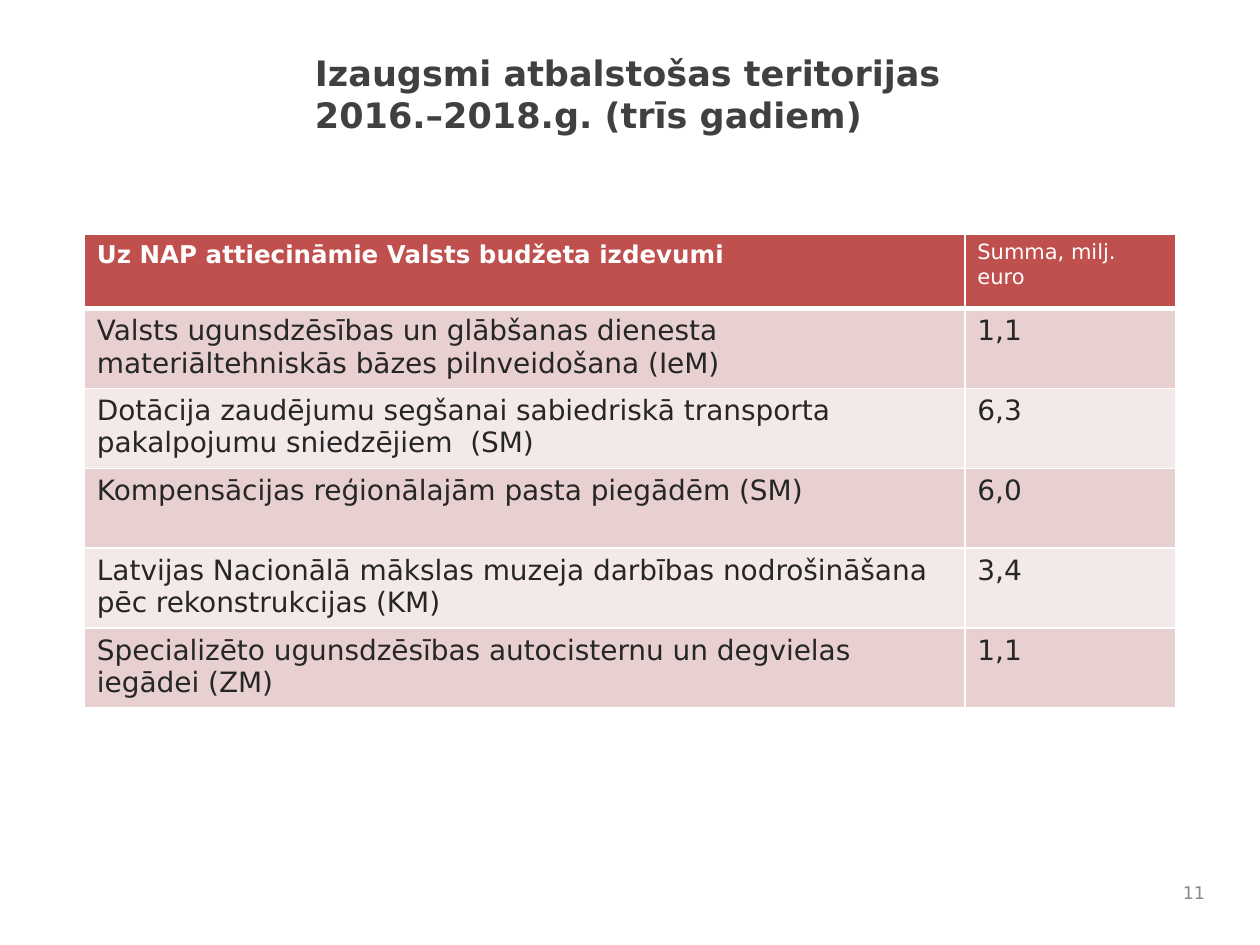
import pptx
import pptx.util
import pptx.dml.color
import pptx.enum.text
import pptx.oxml
import pptx.oxml.ns

Cm = pptx.util.Cm
Pt = pptx.util.Pt


def rgb(value):
    return pptx.dml.color.RGBColor.from_string(value)


def write(paragraph, text, color, formats):
    run = paragraph.add_run()
    run.text = text
    run.font.color.rgb = rgb(color)
    for name, value in {"name": "DejaVu Sans", **formats}.items():
        setattr(run.font, name, value)


deck = pptx.Presentation()
deck.slide_width, deck.slide_height = Cm(25.4), Cm(19.05)
slide = deck.slides.add_slide(deck.slide_layouts[6])

# Title
title = slide.shapes.add_textbox(Cm(6.1), Cm(0.91), Cm(17), Cm(1.96)).text_frame
title.word_wrap = True
title_lines = ["Izaugsmi atbalstošas teritorijas", "2016.–2018.g. (trīs gadiem)"]
for index, line in enumerate(title_lines):
    paragraph = title.add_paragraph() if index else title.paragraphs[0]
    write(paragraph, line, "404040", {"size": Pt(20), "bold": True})

# Budget table
budget = [
    ("Uz NAP attiecināmie Valsts budžeta izdevumi", "Summa, milj. euro"),
    ("Valsts ugunsdzēsības un glābšanas dienesta materiāltehniskās bāzes pilnveidošana (IeM)", "1,1"),
    ("Dotācija zaudējumu segšanai sabiedriskā transporta pakalpojumu sniedzējiem  (SM)", "6,3"),
    ("Kompensācijas reģionālajām pasta piegādēm (SM)", "6,0"),
    ("Latvijas Nacionālā mākslas muzeja darbības nodrošināšana pēc rekonstrukcijas (KM)", "3,4"),
    ("Specializēto ugunsdzēsības autocisternu un degvielas iegādei (ZM)", "1,1"),
]
header_formats = [{"size": Pt(14), "bold": True}, {"size": Pt(12), "bold": False}]
body_formats = {"size": Pt(16), "bold": False}
table = slide.shapes.add_table(
    len(budget), 2, Cm(1.7), Cm(4.72), Cm(22), Cm(9.55)).table
table.columns[0].width, table.columns[1].width = Cm(17.75), Cm(4.25)

for r, entry in enumerate(budget):
    table.rows[r].height = Cm(1.61 if r else 1.5)
    for c, text in enumerate(entry):
        cell = table.cell(r, c)
        color = "262626" if r else "FFFFFF"
        write(cell.text_frame.paragraphs[0], text, color,
              body_formats if r else header_formats[c])

        # White borders, with a thick rule under the header
        edges = {"lnL": 1, "lnR": 1, "lnT": 3 if r == 1 else 1, "lnB": 1 if r else 3}
        properties = cell._tc.get_or_add_tcPr()
        for edge, width in edges.items():
            properties.append(pptx.oxml.parse_xml(
                f'<a:{edge} {pptx.oxml.ns.nsdecls("a")} w="{Pt(width)}"><a:solidFill>'
                f'<a:srgbClr val="FFFFFF"/></a:solidFill></a:{edge}>'))

        # Banded fill
        cell.fill.solid()
        band = "E8D0D0" if r % 2 else "F4E9E9"
        cell.fill.fore_color.rgb = rgb(band if r else "C0504D")

# Slide number
number = slide.shapes.add_textbox(Cm(23.5), Cm(17.58), Cm(1.04), Cm(0.84)).text_frame
number.word_wrap = True
number.vertical_anchor = pptx.enum.text.MSO_ANCHOR.MIDDLE
number.paragraphs[0].alignment = pptx.enum.text.PP_ALIGN.RIGHT
write(number.paragraphs[0], "11", "898989", {"size": Pt(10)})

deck.save("out.pptx")
